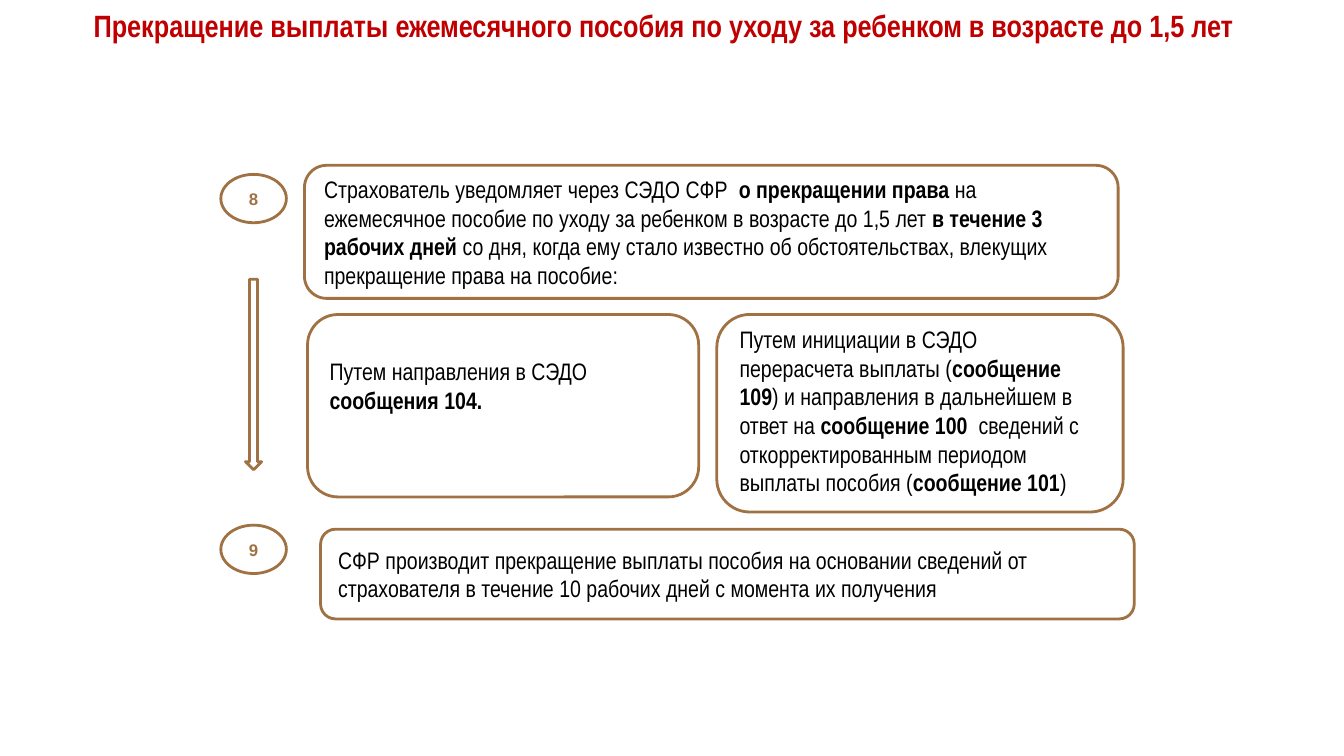
from pptx import Presentation
from pptx.dml.color import RGBColor
from pptx.enum import shapes, text
from pptx.util import Inches, Pt

# Content: runs are (text, bold)
TITLE = "Прекращение выплаты ежемесячного пособия по уходу за ребенком в возрасте до 1,5 лет"
NOTICE = [
    ("Страхователь уведомляет через СЭДО СФР  ", False),
    ("о прекращении права ", True),
    ("на ежемесячное пособие по уходу за ребенком в возрасте до 1,5 лет ", False),
    ("в течение 3 рабочих дней ", True),
    ("со дня, когда ему стало известно об обстоятельствах, влекущих "
     "прекращение права на пособие:", False),
]
MESSAGE_104 = [("Путем направления в СЭДО ", False), ("сообщения 104.", True)]
MESSAGE_109 = [
    ("Путем инициации в СЭДО перерасчета выплаты (", False),
    ("сообщение 109", True),
    (") и направления в дальнейшем в ответ на ", False),
    ("сообщение 100  ", True),
    ("сведений с откорректированным периодом выплаты пособия (", False),
    ("сообщение 101", True),
    (")", False),
]
DECISION = [("СФР производит прекращение выплаты пособия на основании сведений от "
             "страхователя в течение 10 рабочих дней с момента их получения", False)]

THEME = {
    "title": RGBColor(0xC0, 0x00, 0x00), "line": RGBColor(0xA0, 0x72, 0x43),
    "body": RGBColor(0, 0, 0), "narrow": "Arial Narrow", "plain": "Arial",
    "title_size": 22, "body_size": 17, "number_size": 12, "line_width": 2,
}

# Layout in inches
STEP_X, STEP_W, STEP_H = 2.19, 0.65, 0.48
STEPS = [("8", 1.73), ("9", 5.21)]
ARROW_W = 0.16
ARROW_AT = (STEP_X + (STEP_W - ARROW_W) / 2, 2.77, ARROW_W, 1.89)
WIDE, OPTIONS_Y = 8.07, 3.12
PAD = (0.07, 0.07)
# (runs, box, top and bottom inset)
CARDS = [
    (NOTICE, (3.02, 1.64, WIDE, 1.32), PAD),
    (DECISION, (3.18, 5.25, WIDE, 0.89), PAD),
    (MESSAGE_104, (3.05, OPTIONS_Y, 3.88, 1.81), (0.07, 0.47)),
    (MESSAGE_109, (7.11, OPTIONS_Y, 4.03, 1.96), (0, 0.05)),
]


def write(sp, runs, size, color, font, align, anchor=text.MSO_ANCHOR.MIDDLE, pad=PAD, right=0.13):
    tf = sp.text_frame
    tf.word_wrap = True
    tf.vertical_anchor = anchor
    tf.margin_left, tf.margin_right = Inches(0.13), Inches(right)
    tf.margin_top, tf.margin_bottom = [Inches(v) for v in pad]
    p = tf.paragraphs[0]
    p.alignment = align
    for words, bold in runs:
        r = p.add_run()
        r.text = words
        r.font.name, r.font.size, r.font.bold = font, Pt(size), bold
        r.font.color.rgb = color
    return p


def outline(slide, kind, at):
    sp = slide.shapes.add_shape(kind, *[Inches(v) for v in at])
    sp.shadow.inherit = False
    sp.fill.background()
    sp.line.color.rgb = THEME["line"]
    sp.line.width = Pt(THEME["line_width"])
    return sp


def main():
    prs = Presentation()
    prs.slide_width, prs.slide_height = Inches(13.33), Inches(7.5)
    s = prs.slides.add_slide(prs.slide_layouts[6])
    center, left = text.PP_ALIGN.CENTER, text.PP_ALIGN.LEFT

    # Title
    box = s.shapes.add_textbox(Inches(0.49), Inches(0.18), Inches(12.18), Inches(0.33))
    p = write(box, [(TITLE, True)], THEME["title_size"], THEME["title"], THEME["narrow"],
              center, text.MSO_ANCHOR.BOTTOM)
    p.line_spacing = 0.9

    # Step numbers and the arrow between them
    for number, y in STEPS:
        sp = outline(s, shapes.MSO_SHAPE.OVAL, (STEP_X, y, STEP_W, STEP_H))
        write(sp, [(number, True)], THEME["number_size"], THEME["line"], THEME["plain"], center)
    outline(s, shapes.MSO_SHAPE.DOWN_ARROW, ARROW_AT)

    # Text cards
    for runs, at, pad in CARDS:
        sp = outline(s, shapes.MSO_SHAPE.ROUNDED_RECTANGLE, at)
        write(sp, runs, THEME["body_size"], THEME["body"], THEME["narrow"], left,
              pad=pad, right=0.2)

    prs.save("out.pptx")


if __name__ == "__main__":
    main()
